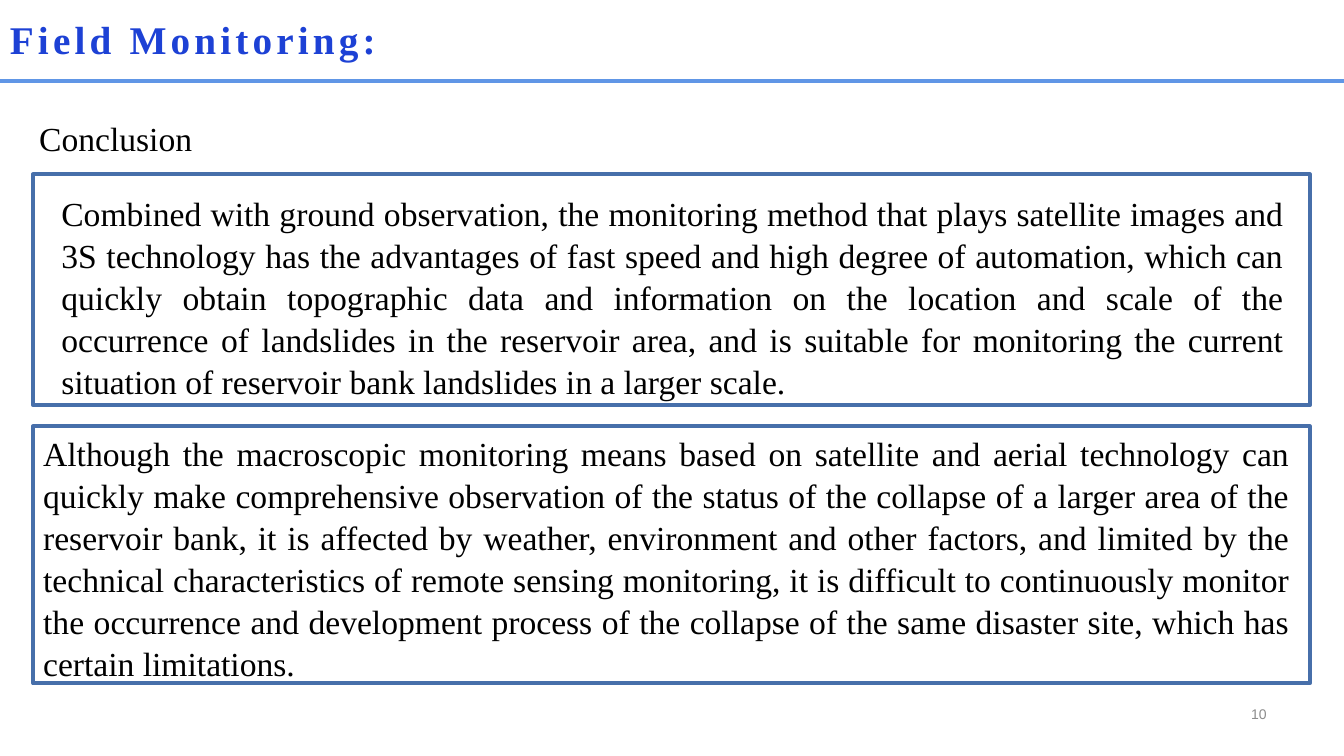
from lxml.etree import SubElement
from pptx import Presentation
from pptx.dml.color import RGBColor
from pptx.enum.shapes import MSO_CONNECTOR, MSO_SHAPE
from pptx.enum.text import MSO_ANCHOR, PP_ALIGN
from pptx.oxml.ns import qn
from pptx.util import Pt

EMU_PER_PX = 9144  # 100 px to the inch
COLORS = {"title": "1D41D5", "rule": "6096E6", "body": "000000",
          "frame": "476FAA", "number": "8C8C8C"}


def px(length):
    return length * EMU_PER_PX


def write_text(frame, text, size=24, font="Times New Roman", color="body",
               bold=False, align=PP_ALIGN.LEFT, tracking=0, leading=1.04):
    paragraph = frame.paragraphs[0]
    paragraph.alignment = align
    paragraph.line_spacing = leading
    run = paragraph.add_run()
    run.text = text
    run.font.size = Pt(size)
    run.font.name = font
    run.font.bold = bold
    run.font.color.rgb = RGBColor.from_string(COLORS[color])
    if tracking:
        run._r.get_or_add_rPr().set("spc", str(tracking * 100))


class SlideBuilder:
    line_width = Pt(3)

    def __init__(self, slide):
        self.slide = slide

    def style_line(self, line, color):
        line.color.rgb = RGBColor.from_string(COLORS[color])
        line.width = self.line_width

    def text(self, box, text, anchor=MSO_ANCHOR.TOP, **text_format):
        frame = self.slide.shapes.add_textbox(*map(px, box)).text_frame
        frame.word_wrap = True
        frame.vertical_anchor = anchor
        write_text(frame, text, **text_format)

    def frame(self, box):
        outline = self.slide.shapes.add_shape(MSO_SHAPE.RECTANGLE, *map(px, box))
        outline.shadow.inherit = False
        outline.fill.background()
        self.style_line(outline.line, "frame")

    def rule(self, start, end):
        rule = self.slide.shapes.add_connector(
            MSO_CONNECTOR.STRAIGHT, *map(px, start + end))
        self.style_line(rule.line, "rule")
        SubElement(rule._element.spPr, qn("a:effectLst"))


def main():
    deck = Presentation()
    deck.slide_width, deck.slide_height = px(1333), px(750)
    page = SlideBuilder(deck.slides.add_slide(deck.slide_layouts[6]))

    # Heading
    page.text((0, 0, 1200, 77), "Field Monitoring:", anchor=MSO_ANCHOR.MIDDLE,
              size=28, color="title", bold=True, tracking=3, leading=1)
    page.rule((-5, 80), (1334, 80))
    page.text((29, 111, 1104, 50), "Conclusion")

    # Framed conclusions: text box, frame, wording
    conclusions = [
        ((51, 185, 1232, 293), (33, 173, 1266, 229),
         "Combined with ground observation, the monitoring method that plays "
         "satellite images and 3S technology has the advantages of fast speed "
         "and high degree of automation, which can quickly obtain topographic "
         "data and information on the location and scale of the occurrence of "
         "landslides in the reservoir area, and is suitable for monitoring the "
         "current situation of reservoir bank landslides in a larger scale."),
        ((33, 423, 1256, 207), (33, 423, 1266, 255),
         "Although the macroscopic monitoring means based on satellite and "
         "aerial technology can quickly make comprehensive observation of the "
         "status of the collapse of a larger area of the reservoir bank, it is "
         "affected by weather, environment and other factors, and limited by "
         "the technical characteristics of remote sensing monitoring, it is "
         "difficult to continuously monitor the occurrence and development "
         "process of the collapse of the same disaster site, which has certain "
         "limitations."),
    ]
    for text_box, frame_box, wording in conclusions:
        page.text(text_box, wording, align=PP_ALIGN.JUSTIFY)
        page.frame(frame_box)

    # Page number
    page.text((971, 691, 295, 35), "10", anchor=MSO_ANCHOR.MIDDLE, size=10,
              font="Arial", color="number", align=PP_ALIGN.RIGHT, leading=1)

    deck.save("out.pptx")


if __name__ == "__main__":
    main()
